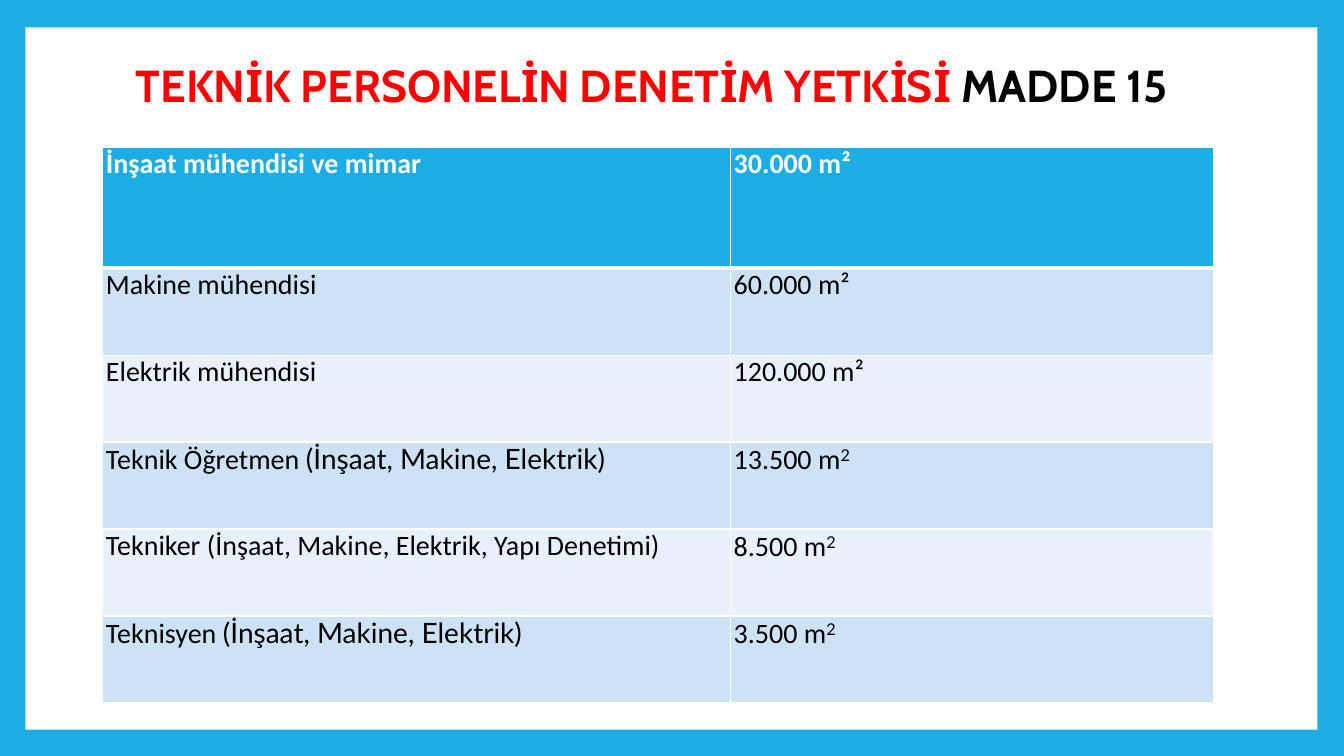
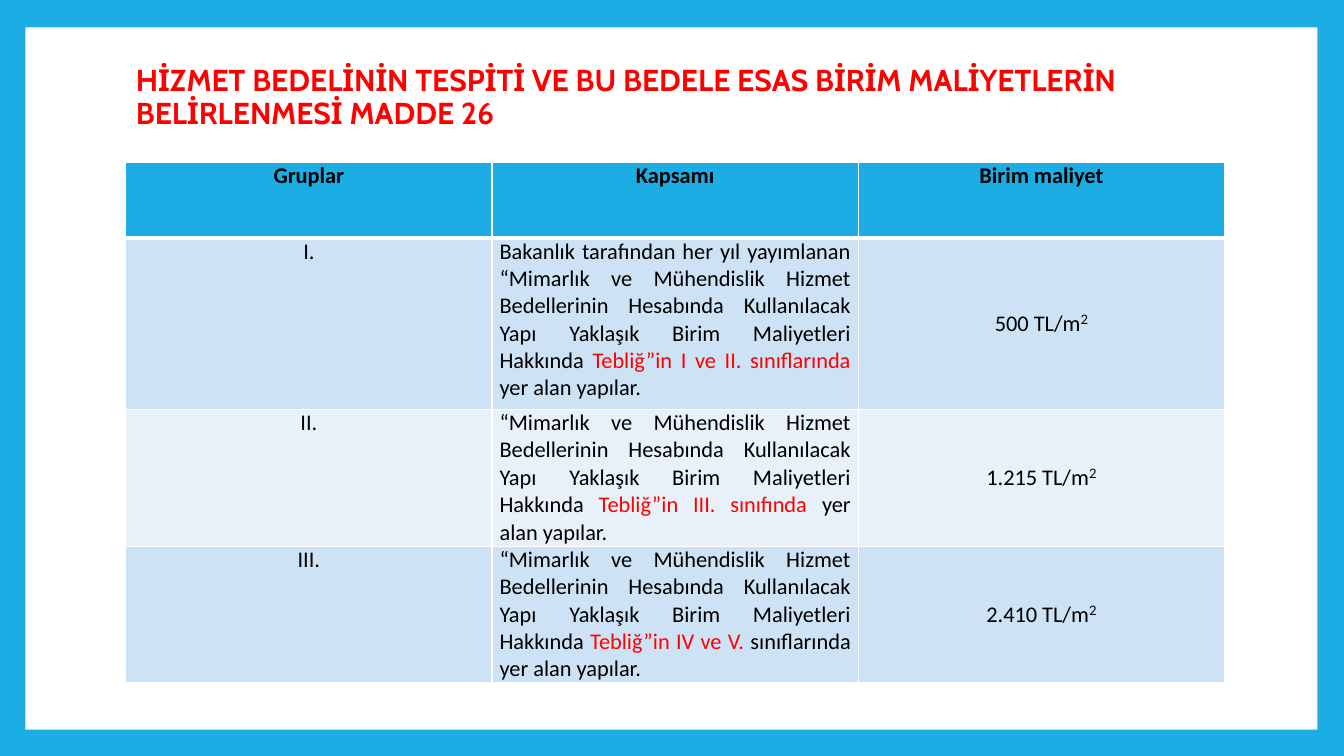
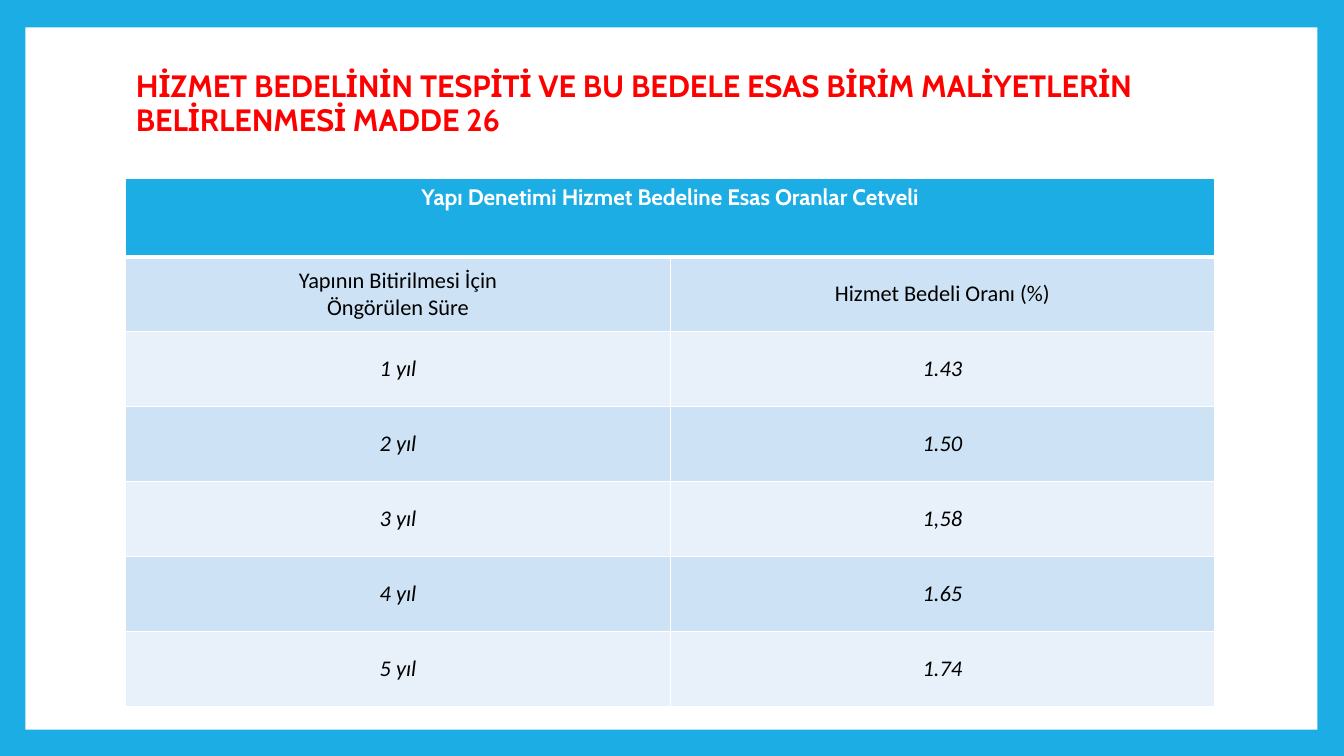
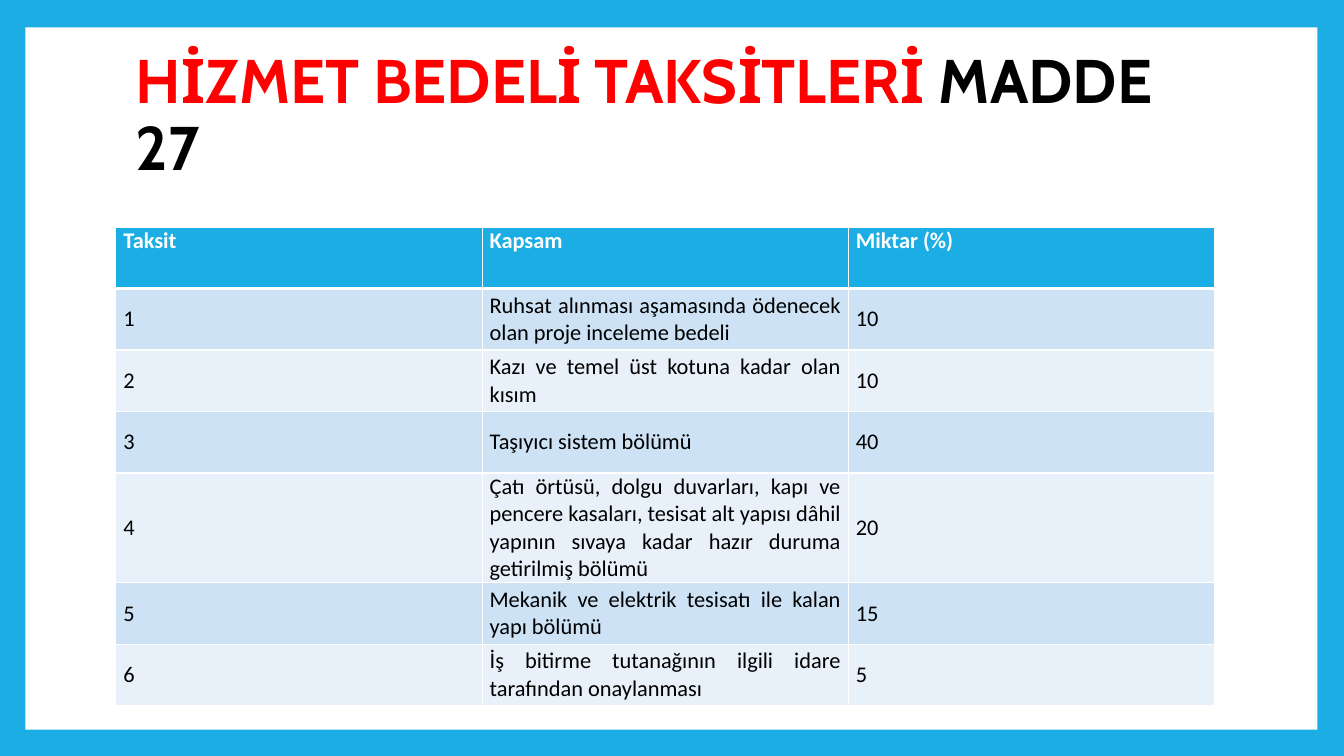
from dataclasses import dataclass
from typing import NamedTuple

from lxml import etree
from pptx import Presentation
from pptx.dml.color import RGBColor
from pptx.enum.shapes import MSO_SHAPE
from pptx.enum.text import MSO_ANCHOR, MSO_AUTO_SIZE, PP_ALIGN
from pptx.oxml.ns import qn
from pptx.util import Cm, Pt

BLUE = RGBColor(0x1C, 0xAD, 0xE4)
DARK_BAND = RGBColor(0xCD, 0xE3, 0xF5)
LIGHT_BAND = RGBColor(0xE8, 0xF1, 0xFA)
WHITE = RGBColor(0xFF, 0xFF, 0xFF)
BLACK = RGBColor(0, 0, 0)
RED = RGBColor(0xFF, 0, 0)

TITLE_FONT, BODY_FONT, ACCENT_FONT = "Cabin", "Calibri", "Lato"
RECTANGLE = MSO_SHAPE.RECTANGLE
TOP, MIDDLE = MSO_ANCHOR.TOP, MSO_ANCHOR.MIDDLE
LEFT, CENTER, JUSTIFY = PP_ALIGN.LEFT, PP_ALIGN.CENTER, PP_ALIGN.JUSTIFY
NO_AUTOFIT = MSO_AUTO_SIZE.NONE
TITLE_ONLY = 5


class Run(NamedTuple):
    text: str
    color: RGBColor = BLACK
    font: str = BODY_FONT
    raised: bool = False


Cell = str | list[Run]


class Column(NamedTuple):
    width: float
    align: PP_ALIGN
    anchor: MSO_ANCHOR


class Inset(NamedTuple):
    side: float
    top: float = 0


@dataclass
class Title:
    runs: list[Run]
    size: float
    height: float
    bottom_inset: float = 0


@dataclass
class Grid:
    left: float
    top: float
    columns: list[Column]
    row_heights: list[float]
    rows: list[list[Cell]]
    inset: Inset
    size: float = 16
    header_align: PP_ALIGN = JUSTIFY
    header_color: RGBColor = WHITE
    header_font: str = BODY_FONT
    header_inset: Inset | None = None
    italic_from: int = 99


class Page(NamedTuple):
    title: Title
    grid: Grid


# Text and cell formatting
def add_text(paragraph, text: str, *, size: float, font: str, color: RGBColor,
             bold: bool = False, italic: bool = False, raised: bool = False) -> None:
    run = paragraph.add_run()
    run.text = text
    run.font.size, run.font.name = Pt(size), font
    run.font.bold, run.font.italic = bold, italic
    run.font.color.rgb = color
    if raised:
        run.font._element.set("baseline", "30000")


def add_borders(cell, bottom_width: float) -> None:
    properties = cell._tc.get_or_add_tcPr()
    for side in ("lnL", "lnR", "lnT", "lnB"):
        width = bottom_width if side == "lnB" else 1
        line = etree.SubElement(properties, qn(f"a:{side}"), w=str(Pt(width)))
        fill = etree.SubElement(line, qn("a:solidFill"))
        etree.SubElement(fill, qn("a:srgbClr"), val=str(WHITE))


def write_cell(cell, content: Cell, grid: Grid, row: int, column: Column) -> None:
    header = row == 0
    inset = grid.header_inset if header and grid.header_inset else grid.inset
    cell.margin_left = cell.margin_right = Cm(inset.side)
    cell.margin_top = cell.margin_bottom = Cm(inset.top)
    cell.vertical_anchor = TOP if header else column.anchor
    if isinstance(content, str):
        color, font = (grid.header_color, grid.header_font) if header else (BLACK, BODY_FONT)
        content = [Run(content, color, font)]
    frame = cell.text_frame
    paragraph = frame.paragraphs[0]
    for run in content:
        for number, line in enumerate(run.text.split("\n")):
            if number:
                paragraph = frame.add_paragraph()
            add_text(paragraph, line, size=grid.size, font=run.font, color=run.color,
                     bold=header, italic=row >= grid.italic_from, raised=run.raised)
    for paragraph in frame.paragraphs:
        paragraph.alignment = grid.header_align if header else column.align


# Slide parts
def fill_title(slide, title: Title) -> None:
    heading = slide.shapes.title
    heading.left, heading.top = Cm(3.17), Cm(1.7)
    heading.width, heading.height = Cm(27.43), Cm(title.height)
    frame = heading.text_frame
    frame.word_wrap, frame.auto_size = True, NO_AUTOFIT
    frame.vertical_anchor = MIDDLE
    frame.margin_top, frame.margin_bottom = 0, Cm(title.bottom_inset)
    paragraph = frame.paragraphs[0]
    paragraph.alignment, paragraph.line_spacing = LEFT, 0.9
    for run in title.runs:
        add_text(paragraph, run.text, size=title.size, font=TITLE_FONT,
                 color=run.color, bold=True)


def draw_grid(slide, grid: Grid) -> None:
    width = sum(column.width for column in grid.columns)
    table = slide.shapes.add_table(
        len(grid.rows), len(grid.columns), Cm(grid.left), Cm(grid.top),
        Cm(width), Cm(sum(grid.row_heights))).table
    for table_column, column in zip(table.columns, grid.columns):
        table_column.width = Cm(column.width)
    for index, (height, contents) in enumerate(zip(grid.row_heights, grid.rows)):
        table.rows[index].height = Cm(height)
        band = BLUE if index == 0 else DARK_BAND if index % 2 else LIGHT_BAND
        for cell in table.rows[index].cells:
            add_borders(cell, 3 if index == 0 else 1)
            cell.fill.solid()
            cell.fill.fore_color.rgb = band
        if len(contents) < len(grid.columns):
            table.cell(index, 0).merge(table.cell(index, len(grid.columns) - 1))
        for number, content in enumerate(contents):
            write_cell(table.cell(index, number), content, grid, index, grid.columns[number])


def style_master(prs, slide) -> None:
    """Give the master a blue background and the white panel that frames each slide."""
    master = prs.slide_master
    master.background.fill.solid()
    master.background.fill.fore_color.rgb = BLUE
    panel = slide.shapes.add_shape(RECTANGLE, Cm(0.64), Cm(0.69), Cm(32.56), Cm(17.7))
    panel.shadow.inherit = False
    panel.fill.solid()
    panel.fill.fore_color.rgb = WHITE
    panel.line.fill.background()
    master.shapes.element.insert(2, panel.element)


# Content
def area(value: str) -> list[Run]:
    return [Run(f"{value}m"), Run("2", font=ACCENT_FONT, raised=True)]


def staff(role: str) -> list[Run]:
    return [Run(f"{role} "), Run("(İnşaat, Makine, Elektrik)", font=ACCENT_FONT)]


def scope(classes: str, ending: str, opening: str = "") -> list[Run]:
    return [Run(f"{opening}“Mimarlık ve Mühendislik Hizmet Bedellerinin Hesabında "
                "Kullanılacak Yapı Yaklaşık Birim Maliyetleri Hakkında "),
            Run(f"Tebliğ”in {classes} ", RED), Run(ending)]


FEE_TITLE = [Run("HİZMET BEDELİNİN TESPİTİ VE BU BEDELE ESAS BİRİM MALİYETLERİN "
                 "BELİRLENMESİ MADDE 26", RED)]
THIRD = 9.23

PAGES = [
    Page(
        Title([Run("TEKNİK PERSONELİN DENETİM YETKİSİ ", RED), Run("MADDE 15")],
              32, 2.36, 1.34),
        Grid(2.59, 3.71, [Column(15.82, JUSTIFY, TOP), Column(12.17, JUSTIFY, TOP)],
             [3.05] + [2.19] * 5,
             [["İnşaat mühendisi ve mimar", "30.000 m²"],
              ["Makine mühendisi", "60.000 m²"],
              ["Elektrik mühendisi", "120.000 m²"],
              [staff("Teknik Öğretmen"), area("13.500 ")],
              ["Tekniker (İnşaat, Makine, Elektrik, Yapı Denetimi)", area("8.500 ")],
              [staff("Teknisyen"), area("3.500 ")]],
             Inset(0.08), size=20)),
    Page(
        Title(FEE_TITLE, 21.6, 2.38, 0.82),
        Grid(3.17, 4.09,
             [Column(THIRD, CENTER, TOP), Column(THIRD, JUSTIFY, TOP),
              Column(THIRD, CENTER, MIDDLE)],
             [1.9, 4.32, 3.23, 3.23],
             [["Gruplar", "Kapsamı", "Birim maliyet"],
              ["I.", scope("I ve II. sınıflarında", "yer alan yapılar.",
                           "Bakanlık tarafından her yıl yayımlanan "), area("500 TL/")],
              ["II.", scope("III. sınıfında", "yer alan yapılar."), area("1.215 TL/")],
              ["III.", scope("IV ve V.", "sınıflarında yer alan yapılar."),
               area("2.410 TL/")]],
             Inset(0.19), header_align=CENTER, header_color=BLACK)),
    Page(
        Title(FEE_TITLE, 22, 2.79, 0.92),
        Grid(3.17, 4.5, [Column(13.72, CENTER, MIDDLE)] * 2, [1.97] + [1.89] * 6,
             [["Yapı Denetimi Hizmet Bedeline Esas Oranlar Cetveli"],
              ["Yapının Bitirilmesi İçin\nÖngörülen Süre", "Hizmet Bedeli Oranı (%)"],
              ["1 yıl", "1.43"],
              ["2 yıl", "1.50"],
              ["3 yıl", "1,58"],
              ["4 yıl", "1.65"],
              ["5 yıl", "1.74"]],
             Inset(0.13), header_align=CENTER, header_font=TITLE_FONT,
             header_inset=Inset(0.25, 0.13), italic_from=2)),
    Page(
        Title([Run("HİZMET BEDELİ TAKSİTLERİ ", RED), Run("MADDE 27")], 44, 2.49),
        Grid(2.92, 5.72, [Column(THIRD, JUSTIFY, MIDDLE)] * 3, [1.55] * 7,
             [["Taksit", "Kapsam", "Miktar (%)"],
              ["1", "Ruhsat alınması aşamasında ödenecek olan proje inceleme bedeli", "10"],
              ["2", "Kazı ve temel üst kotuna kadar olan kısım", "10"],
              ["3", "Taşıyıcı sistem bölümü", "40"],
              ["4", "Çatı örtüsü, dolgu duvarları, kapı ve pencere kasaları, tesisat alt "
                    "yapısı dâhil yapının sıvaya kadar hazır duruma getirilmiş bölümü", "20"],
              ["5", "Mekanik ve elektrik tesisatı ile kalan yapı bölümü", "15"],
              ["6", "İş bitirme tutanağının ilgili idare tarafından onaylanması", "5"]],
             Inset(0.19))),
]


def main() -> None:
    prs = Presentation()
    prs.slide_width, prs.slide_height = Cm(33.87), Cm(19.05)
    for page in PAGES:
        slide = prs.slides.add_slide(prs.slide_layouts[TITLE_ONLY])
        fill_title(slide, page.title)
        draw_grid(slide, page.grid)
    style_master(prs, prs.slides[0])
    prs.save("out.pptx")


if __name__ == "__main__":
    main()
